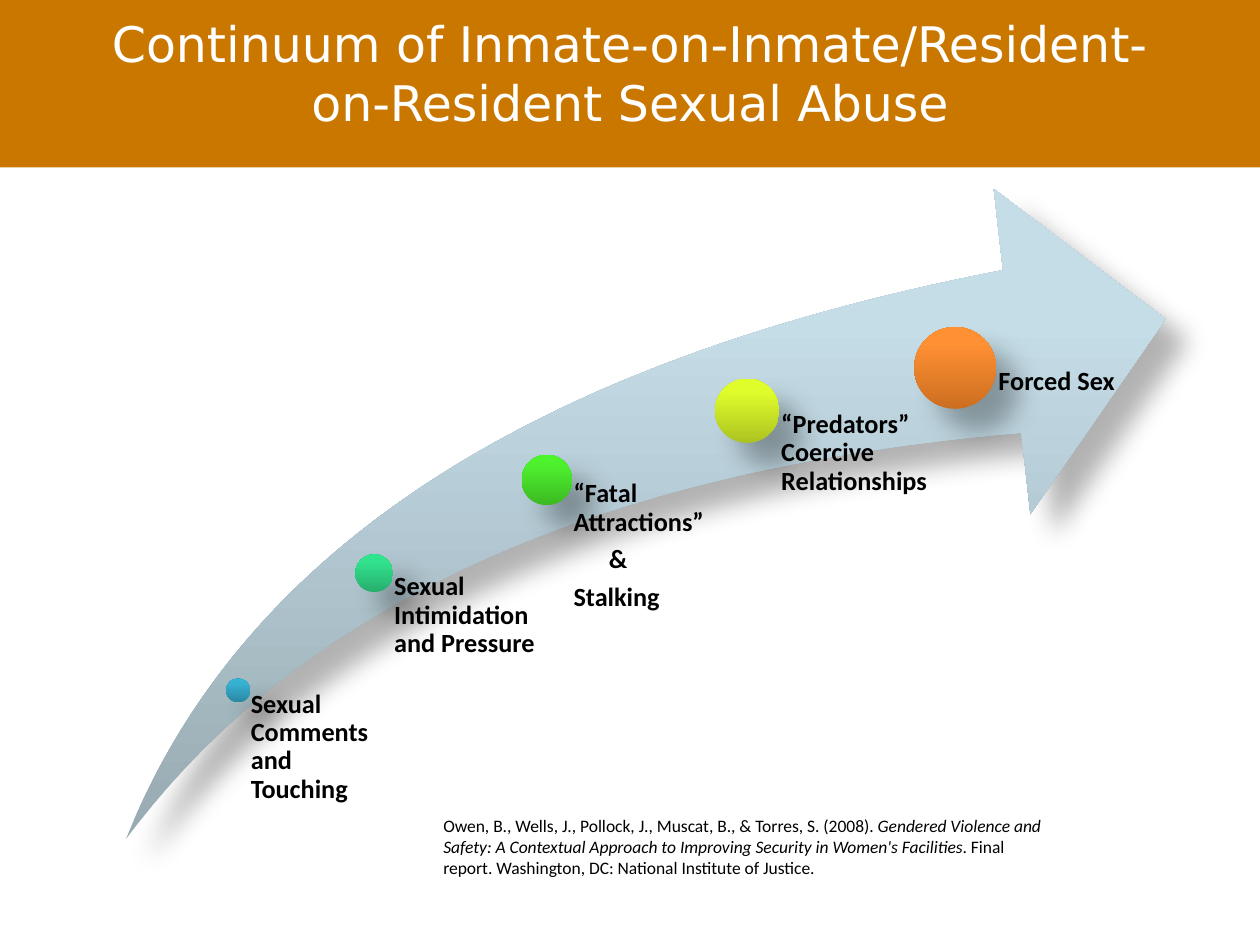
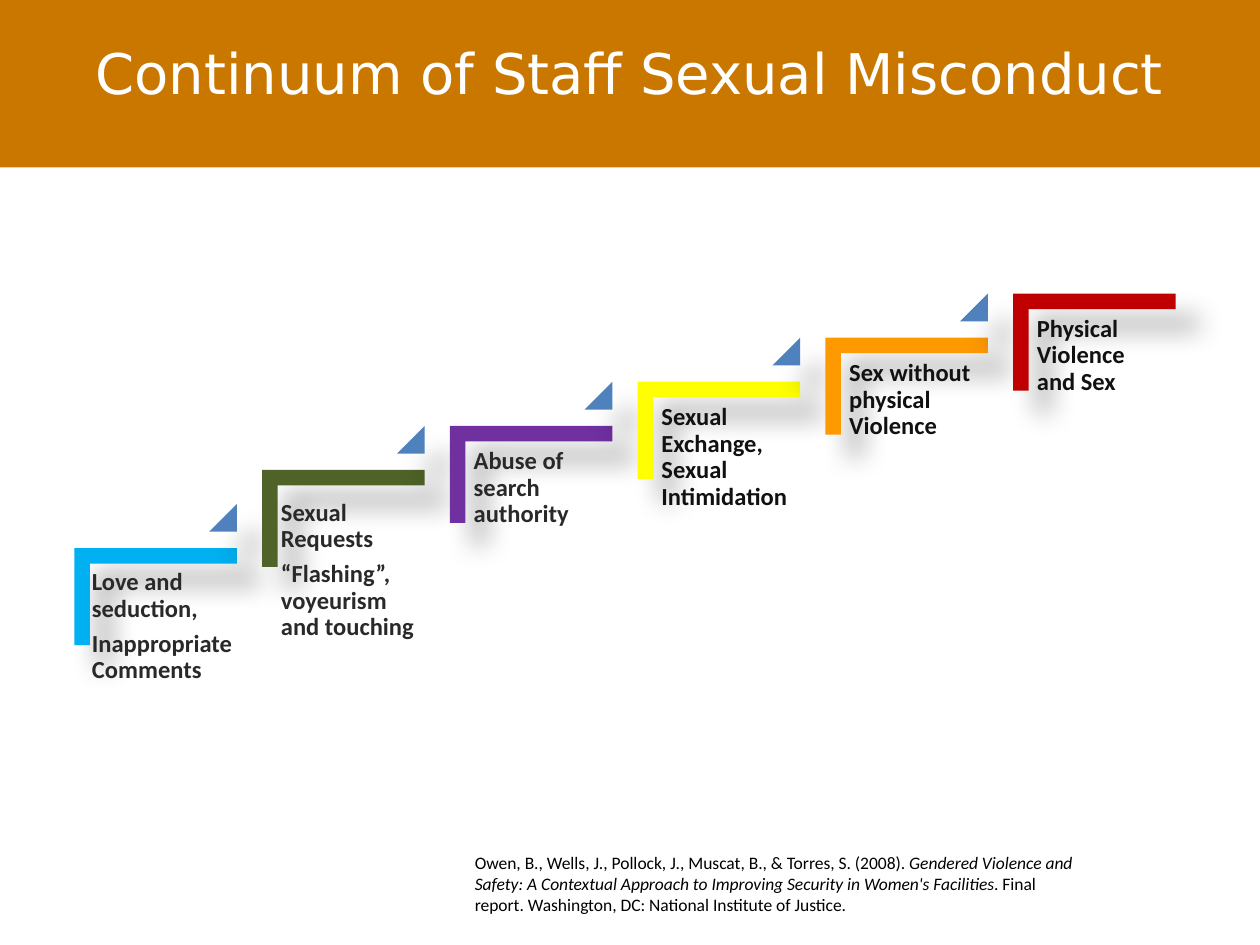
from copy import deepcopy
from dataclasses import dataclass

from lxml.etree import SubElement
from pptx import Presentation
from pptx.dml.color import RGBColor
from pptx.enum.shapes import MSO_SHAPE
from pptx.enum.text import MSO_ANCHOR, PP_ALIGN
from pptx.oxml.ns import qn
from pptx.util import Inches, Pt


@dataclass(frozen=True)
class Theme:
    """Colours, fonts and type sizes shared by the slides."""
    band: str = "CA7700"
    title: str = "FFFFFF"
    ink: str = "000000"
    soft_ink: str = "292929"
    deep_ink: str = "111111"
    marker: str = "4F81BD"
    arrow: tuple = ("98AAB2", "C5DDE7", "C6DEE9")
    title_font: str = "DejaVu Sans"
    body_font: str = "Calibri"
    title_size: int = 32
    long_title_size: int = 28
    dot_size: int = 15
    step_size: int = 14
    cite_size: int = 10


T = Theme()

CITATION = (
    ("Owen, B., Wells, J., Pollock, J., Muscat, B., & Torres, S. (2008). ", False),
    ("Gendered Violence and Safety: A Contextual Approach to Improving "
     "Security in Women's Facilities", True),
    (". Final report. Washington, DC: National Institute of Justice.", False),
)

DOTS = (
    (0.89, 3.98, 0.19, 1.08, ("2A88A2", "37B1D2", "34B4D6"),
     ["Sexual Comments and Touching"]),
    (1.97, 3.05, 0.3, 1.37, ("26AE6D", "32E28D", "2EE68E"),
     ["Sexual Intimidation and Pressure"]),
    (3.34, 2.31, 0.4, 1.59, ("3CB923", "4EF02E", "4CF52A"),
     ["“Fatal Attractions”", "&", "Stalking"]),
    (4.93, 1.76, 0.51, 1.65, ("ACC321", "DFFD2B", "E1FF2B"),
     ["“Predators” Coercive Relationships"]),
    (6.58, 1.42, 0.65, 1.65, ("CC6E20", "FF9034", "FF9136"),
     ["Forced Sex"]),
)

LABEL = (0.13, 0.12, 1.16, 1.02)
STEPS = (
    ("00B0F0", T.soft_ink, (0.08, 0.11, 1.3, 1.02),
     ["Love and seduction,", "Inappropriate Comments"]),
    ("4F6228", T.soft_ink, (0.09, 0.18, 1.26, 1.55),
     ["Sexual Requests", "“Flashing”, voyeurism and touching"]),
    ("7030A0", T.soft_ink, LABEL, ["Abuse of search authority"]),
    ("FFFF00", T.deep_ink, LABEL, ["Sexual Exchange, Sexual Intimidation"]),
    ("FF9900", T.deep_ink, LABEL, ["Sex without physical Violence"]),
    ("C00000", T.deep_ink, LABEL, ["Physical Violence and Sex"]),
)


def rgb(color):
    """Turn a hex string into a colour."""
    return RGBColor.from_string(color)


def style(font, name, size, color, bold=False, italic=False):
    """Set the look of a font."""
    font.name, font.size = name, Pt(size)
    font.color.rgb = rgb(color)
    font.bold, font.italic = bold, italic


def paint(fill, colors):
    """Fill with one colour, or with a gradient rising from the bottom."""
    if isinstance(colors, str):
        fill.solid()
        fill.fore_color.rgb = rgb(colors)
        return
    fill.gradient()
    fill.gradient_angle = 90
    last = fill.gradient_stops[1]._gs
    last.addnext(deepcopy(last))
    for stop, color, position in zip(fill.gradient_stops, colors, (0, 0.8, 1)):
        stop.color.rgb = rgb(color)
        stop.position = position


def cast_shadow(sp):
    """Give a shape a soft shadow towards the lower right."""
    effects = sp._element.spPr.find(qn("a:effectLst"))
    shadow = SubElement(effects, qn("a:outerShdw"), blurRad=str(Pt(15)),
                        dist=str(Pt(18)), dir="2700000", rotWithShape="0")
    color = SubElement(shadow, qn("a:srgbClr"), val="000000")
    SubElement(color, qn("a:alpha"), val="30000")


def add_shape(s, kind, box, colors, adjust=(), shadow=True):
    """Add a filled shape without outline."""
    sp = s.shapes.add_shape(kind, *map(Inches, box))
    for i, value in enumerate(adjust):
        sp.adjustments[i] = value
    paint(sp.fill, colors)
    sp.line.fill.background()
    sp.shadow.inherit = False
    if shadow:
        cast_shadow(sp)
    return sp


def add_text(s, box, insets=(0.1, 0.05, 0.1, 0.05)):
    """Add a wrapping text box and return its frame."""
    tf = s.shapes.add_textbox(*map(Inches, box)).text_frame
    tf.word_wrap = True
    (tf.margin_left, tf.margin_top,
     tf.margin_right, tf.margin_bottom) = map(Inches, insets)
    return tf


def add_label(s, box, insets, lines, size, color):
    """Add a bold label of one or more paragraphs."""
    tf = add_text(s, box, insets)
    tf.text = "\n".join(lines)
    for p in tf.paragraphs:
        p.line_spacing = 0.9
        p.space_after = Pt(0.35 * size)
        if p.text == "&":
            p._p.get_or_add_pPr().set("marL", str(Inches(0.28)))
        for r in p.runs:
            style(r.font, T.body_font, size, color, bold=True)


def add_header(s, title, size):
    """Add the band and the centred title."""
    add_shape(s, MSO_SHAPE.RECTANGLE, (0, 0, 10, 1.33), T.band, shadow=False)
    tf = add_text(s, (0.5, 0.09, 9, 0.97))
    tf.vertical_anchor = MSO_ANCHOR.MIDDLE
    tf.text = title
    p = tf.paragraphs[0]
    p.alignment = PP_ALIGN.CENTER
    style(p.runs[0].font, T.title_font, size, T.title)


def add_citation(s, left, top):
    """Add the source reference."""
    p = add_text(s, (left, top, 5, 0.77)).paragraphs[0]
    for text, italic in CITATION:
        r = p.add_run()
        r.text = text
        style(r.font, T.body_font, T.cite_size, T.ink, italic=italic)


def add_arrow_continuum(s, box):
    """Add the rising arrow with growing dots and their labels."""
    left, top, _, height = box
    add_shape(s, MSO_SHAPE.SWOOSH_ARROW, box, T.arrow, (0.25, 0.25))
    for dx, dy, size, width, colors, lines in DOTS:
        x, y = left + dx, top + dy
        add_shape(s, MSO_SHAPE.OVAL,
                  (x - size / 2, y - size / 2, size, size), colors)
        label = (x, y, width, height + 0.05 - dy)
        add_label(s, label, (0.53 * size, 0, 0, 0), lines, T.dot_size, T.ink)


def add_staircase(s, left, top, width):
    """Add the rising steps, the markers between them and their labels."""
    long, short, rise, first_drop = 1.29, 0.77, 0.35, 0.27
    last = len(STEPS) - 1
    pitch = (width - long) / last
    offset = (long - short) / 2
    for i, (color, ink, (dx, dy, w, h), lines) in enumerate(STEPS):
        x = left + i * pitch
        y = top + (last - i) * rise + (first_drop if i == 0 else 0)
        corner = add_shape(s, MSO_SHAPE.CORNER,
                           (x + offset, y - offset, short, long),
                           color, (0.161, 0.161))
        corner.rotation = 90
        add_label(s, (x + dx, y + dy, w, h), (0.06,) * 4, lines,
                  T.step_size, ink)
        if i < last:
            add_shape(s, MSO_SHAPE.ISOSCELES_TRIANGLE,
                      (x + 1.07, y - rise, 0.22, 0.22), T.marker, (1,))


def inmate_slide(prs):
    """Build the slide on abuse between inmates."""
    s = prs.slides.add_slide(prs.slide_layouts[6])
    add_header(s, "Continuum of Inmate-on-Inmate/Resident-on-Resident "
               "Sexual Abuse", T.long_title_size)
    add_arrow_continuum(s, (1, 1.5, 8.25, 5.16))
    add_citation(s, 3.42, 6.42)


def staff_slide(prs):
    """Build the slide on misconduct by staff."""
    s = prs.slides.add_slide(prs.slide_layouts[6])
    add_header(s, "Continuum of Staff Sexual Misconduct", T.title_size)
    add_staircase(s, 0.59, 2.33, 8.74)
    add_citation(s, 3.67, 6.71)


def main():
    """Build and save the presentation."""
    prs = Presentation()
    prs.slide_width, prs.slide_height = Inches(10), Inches(7.5)
    inmate_slide(prs)
    staff_slide(prs)
    prs.save("out.pptx")


if __name__ == "__main__":
    main()
